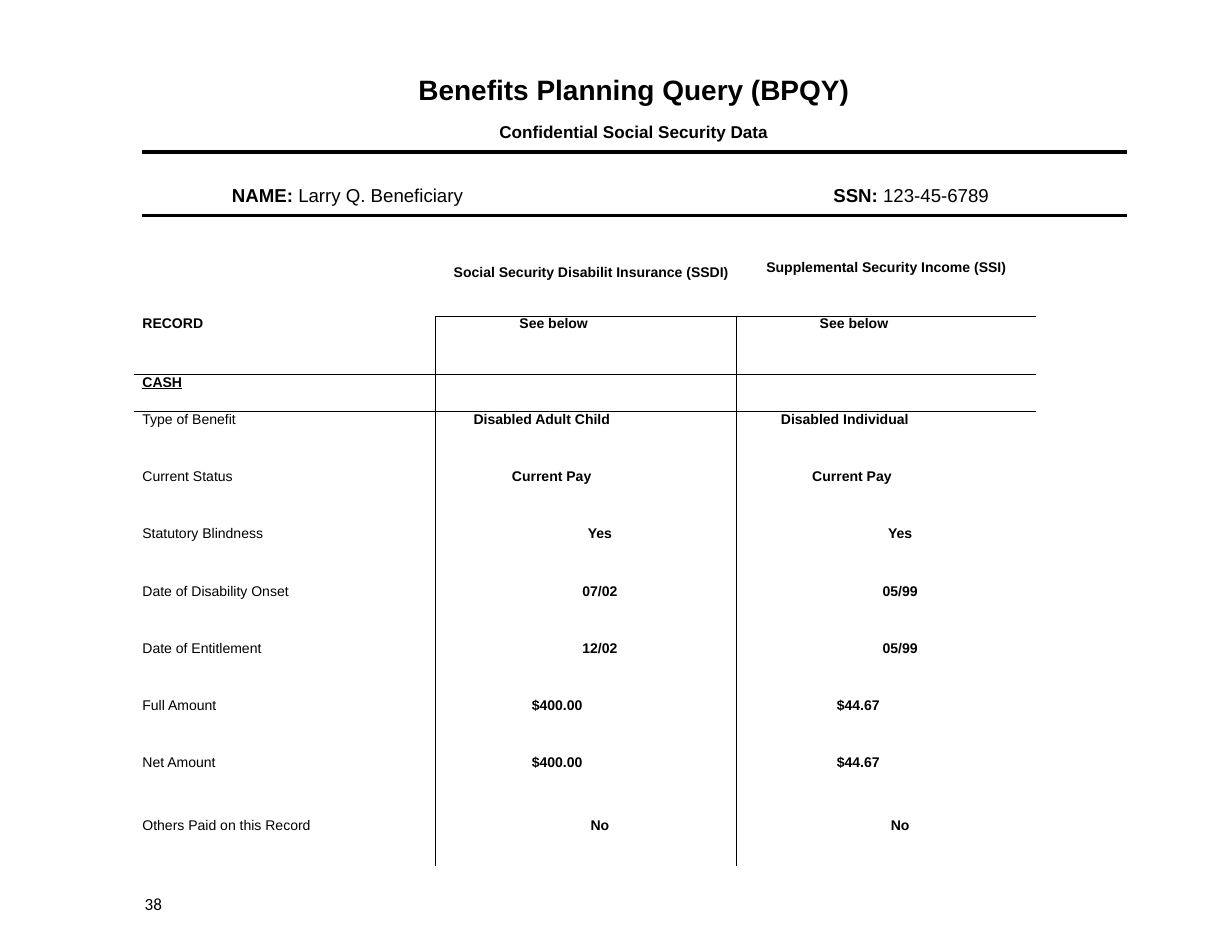
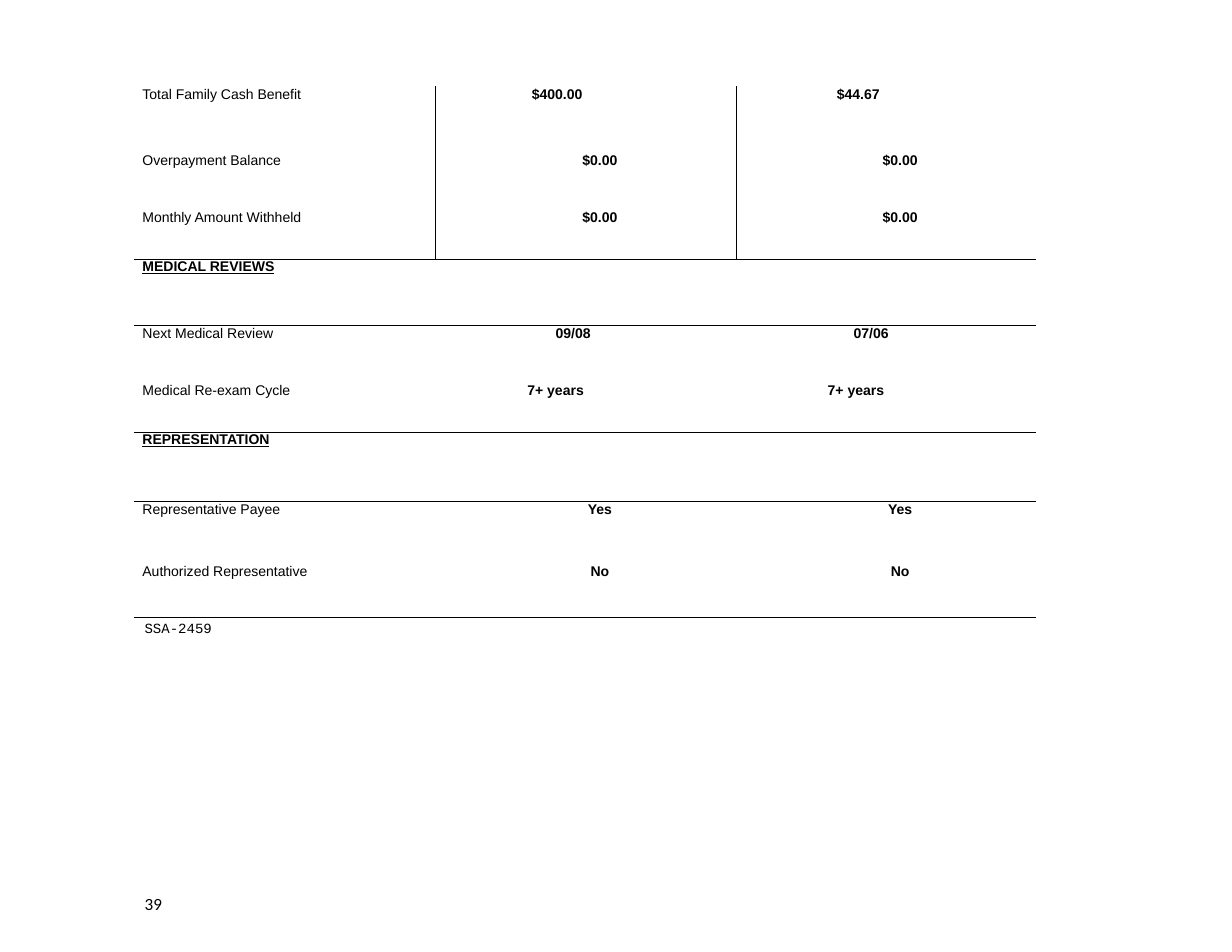
import dataclasses
import typing

import pptx
import pptx.dml.color
import pptx.enum.shapes
import pptx.enum.text
import pptx.oxml.ns
import pptx.util
from lxml import etree

Cm = pptx.util.Cm
Pt = pptx.util.Pt
qn = pptx.oxml.ns.qn
Align = pptx.enum.text.PP_ALIGN


# Theme
@dataclasses.dataclass(frozen=True)
class Theme:
    ink: str = "000000"
    face: str = "Arial"
    page_face: str = "Calibri"
    code_face: str = "Courier New"
    title: float = 18
    lead: float = 11
    name: float = 12
    body: float = 9
    rule: float = 2.25
    grid: float = 0.58


THEME = Theme()


# Repeated elements
@dataclasses.dataclass(frozen=True)
class Row:
    """One table row. A value without a pad is centred in its cell."""
    high: float
    texts: tuple[str, ...]
    pads: tuple[float, ...] = ()
    split: bool = True                  # upright lines between columns
    base: typing.Optional[int] = None   # first column with a bottom line
    head: str = "plain"                 # plain, bold, or section label
    span: bool = False                  # label runs over all columns
    leads: tuple[typing.Any, ...] = (None, None, None)


class Box(typing.NamedTuple):
    left: float
    top: float
    width: float
    high: float


COLS = (6.83, 6.81, 6.81)
LEFT = 3.05
LABEL_PAD = 0.18
MID_PAD = 0.64

STATUS = [
    Row(1.4, ("", "Social Security Disabilit Insurance (SSDI)",
              "Supplemental Security Income (SSI)"),
        (0.41, 0.69), split=False, base=1, leads=(None, 1.66, Pt(13.8))),
    Row(1.32, ("RECORD", "See below", "See below"), (1.9, 1.9), base=0, head="bold"),
    Row(0.84, ("CASH", "", ""), base=0, head="section"),
    Row(1.3, ("Type of Benefit", "Disabled Adult Child", "Disabled Individual"),
        (0.86, 1.02)),
    Row(1.3, ("Current Status", "Current Pay", "Current Pay"), (1.73, 1.73)),
    Row(1.3, ("Statutory Blindness", "Yes", "Yes")),
    Row(1.3, ("Date of Disability Onset", "07/02", "05/99")),
    Row(1.3, ("Date of Entitlement", "12/02", "05/99")),
    Row(1.3, ("Full Amount", "$400.00", "$44.67"), (2.18, 2.29)),
    Row(1.17, ("Net Amount", "$400.00", "$44.67"), (2.18, 2.29)),
    Row(1.42, ("Others Paid on this Record", "No", "No")),
]
STATUS_END = 1.09

REVIEWS = [
    Row(1.5, ("Total Family Cash Benefit", "$400.00", "$44.67"), (2.18, 2.29)),
    Row(1.3, ("Overpayment Balance", "$0.00", "$0.00")),
    Row(1.12, ("Monthly Amount Withheld", "$0.00", "$0.00"), base=0),
    Row(1.5, ("MEDICAL REVIEWS",), split=False, base=0, head="section", span=True),
    Row(1.3, ("Next Medical Review", "09/08", "07/06"), (2.72, 2.67), split=False),
    Row(1.12, ("Medical Re-exam Cycle", "7+ years", "7+ years"), (2.08, 2.08),
        split=False, base=0),
    Row(1.57, ("REPRESENTATION",), split=False, base=0, head="section", span=True),
    Row(1.42, ("Representative Payee", "Yes", "Yes"), split=False),
    Row(1.22, ("Authorized Representative", "No", "No"), split=False, base=0),
]


# Text
def write(para, text: str, *, size: float = THEME.body, face: str = THEME.face,
          bold: bool = False, under: bool = False, align=Align.LEFT,
          pad: float = 0, lead=None, above: float = 0) -> None:
    """Append a run and set the format of its paragraph."""
    para.alignment = align
    props = para._p.get_or_add_pPr()
    props.set("marL", str(Cm(pad)))
    props.set("indent", "0")
    if lead:
        para.line_spacing = lead
    if above:
        para.space_before = Pt(above)
    run = para.add_run()
    run.text = text
    font = run.font
    font.name, font.size, font.bold, font.underline = face, Pt(size), bold, under
    font.color.rgb = pptx.dml.color.RGBColor.from_string(THEME.ink)


def add_box(slide, box: Box):
    frame = slide.shapes.add_textbox(*map(Cm, box)).text_frame
    frame.margin_left = frame.margin_right = 0
    frame.margin_top = frame.margin_bottom = 0
    frame.word_wrap = True
    return frame


# Lines
def add_rule(slide, top: float) -> None:
    line = slide.shapes.add_connector(
        pptx.enum.shapes.MSO_CONNECTOR.STRAIGHT, Cm(3.23), Cm(top), Cm(25.55), Cm(top))
    line.line.color.rgb = pptx.dml.color.RGBColor.from_string(THEME.ink)
    line.line.width = Pt(THEME.rule)
    etree.SubElement(line._element.spPr, qn("a:effectLst"))


def set_edges(cell, edges: dict[str, bool]) -> None:
    props = cell._tc.get_or_add_tcPr()
    for side, shown in edges.items():
        line = etree.SubElement(props, qn(f"a:ln{side}"), w=str(Pt(THEME.grid)))
        if shown:
            fill = etree.SubElement(line, qn("a:solidFill"))
            etree.SubElement(fill, qn("a:srgbClr"), val=THEME.ink)
        else:
            etree.SubElement(line, qn("a:noFill"))


# Table
def fill_cell(cell, row: Row, col: int) -> None:
    if col >= len(row.texts) or not row.texts[col]:
        return
    para = cell.text_frame.paragraphs[0]
    if col == 0:
        write(para, row.texts[0], pad=LABEL_PAD, bold=row.head != "plain",
              under=row.head == "section")
    elif row.pads:
        write(para, row.texts[col], bold=True, pad=row.pads[col - 1],
              lead=row.leads[col])
    else:
        write(para, row.texts[col], bold=True, pad=MID_PAD, align=Align.CENTER)


def add_grid(slide, top: float, rows: list[Row]) -> None:
    table = slide.shapes.add_table(
        len(rows), len(COLS), Cm(LEFT), Cm(top), Cm(sum(COLS)),
        Cm(sum(row.high for row in rows))).table
    table.first_row = table.horz_banding = False
    for col, width in enumerate(COLS):
        table.columns[col].width = Cm(width)
    above = None
    for i, row in enumerate(rows):
        table.rows[i].height = Cm(row.high)
        if row.span:
            table.cell(i, 0).merge(table.cell(i, len(COLS) - 1))
        for col in range(len(COLS)):
            cell = table.cell(i, col)
            cell.margin_left = cell.margin_right = 0
            cell.margin_top = cell.margin_bottom = 0
            set_edges(cell, {
                "L": row.split and col > 0,
                "R": row.split and col < len(COLS) - 1,
                "T": above is not None and col >= above,
                "B": row.base is not None and col >= row.base,
            })
            cell.fill.background()
            fill_cell(cell, row, col)
        above = row.base


# Slides
def add_page(deck, number: int):
    slide = deck.slides.add_slide(deck.slide_layouts[6])
    frame = add_box(slide, Box(3.2, 20.27, 0.69, 0.48))
    write(frame.paragraphs[0], str(number), size=THEME.lead,
          face=THEME.page_face, pad=0.08)
    return slide


def add_field(slide, box: Box, label: str, value: str) -> None:
    para = add_box(slide, box).paragraphs[0]
    write(para, f"{label}: ", size=THEME.name, bold=True, pad=0.03)
    write(para, value, size=THEME.name, pad=0.03)


def build_status(deck) -> None:
    slide = add_page(deck, 38)
    frame = add_box(slide, Box(8, 1.65, 12.75, 1.6))
    write(frame.paragraphs[0], "Benefits Planning Query (BPQY)",
          size=THEME.title, bold=True, align=Align.CENTER)
    write(frame.add_paragraph(), "Confidential Social Security Data",
          size=THEME.lead, bold=True, align=Align.CENTER, above=9.6)
    for top in (3.45, 4.89):
        add_rule(slide, top)
    add_field(slide, Box(5.23, 4.17, 6.88, 0.51), "NAME", "Larry Q. Beneficiary")
    add_field(slide, Box(18.87, 4.17, 4.65, 0.51), "SSN", "123-45-6789")
    last = dataclasses.replace(STATUS[-1], high=STATUS_END)
    add_grid(slide, 5.77, STATUS[:-2] + [
        dataclasses.replace(STATUS[-2], high=STATUS[-1].high), last])


def build_reviews(deck) -> None:
    slide = add_page(deck, 39)
    add_grid(slide, 1.96, REVIEWS)
    frame = add_box(slide, Box(3.25, 14.05, 2.06, 0.38))
    write(frame.paragraphs[0], "SSA-2459", face=THEME.code_face, pad=0.03)


def main() -> None:
    deck = pptx.Presentation()
    deck.slide_width, deck.slide_height = Cm(27.94), Cm(21.59)
    build_status(deck)
    build_reviews(deck)
    deck.save("out.pptx")


if __name__ == "__main__":
    main()
